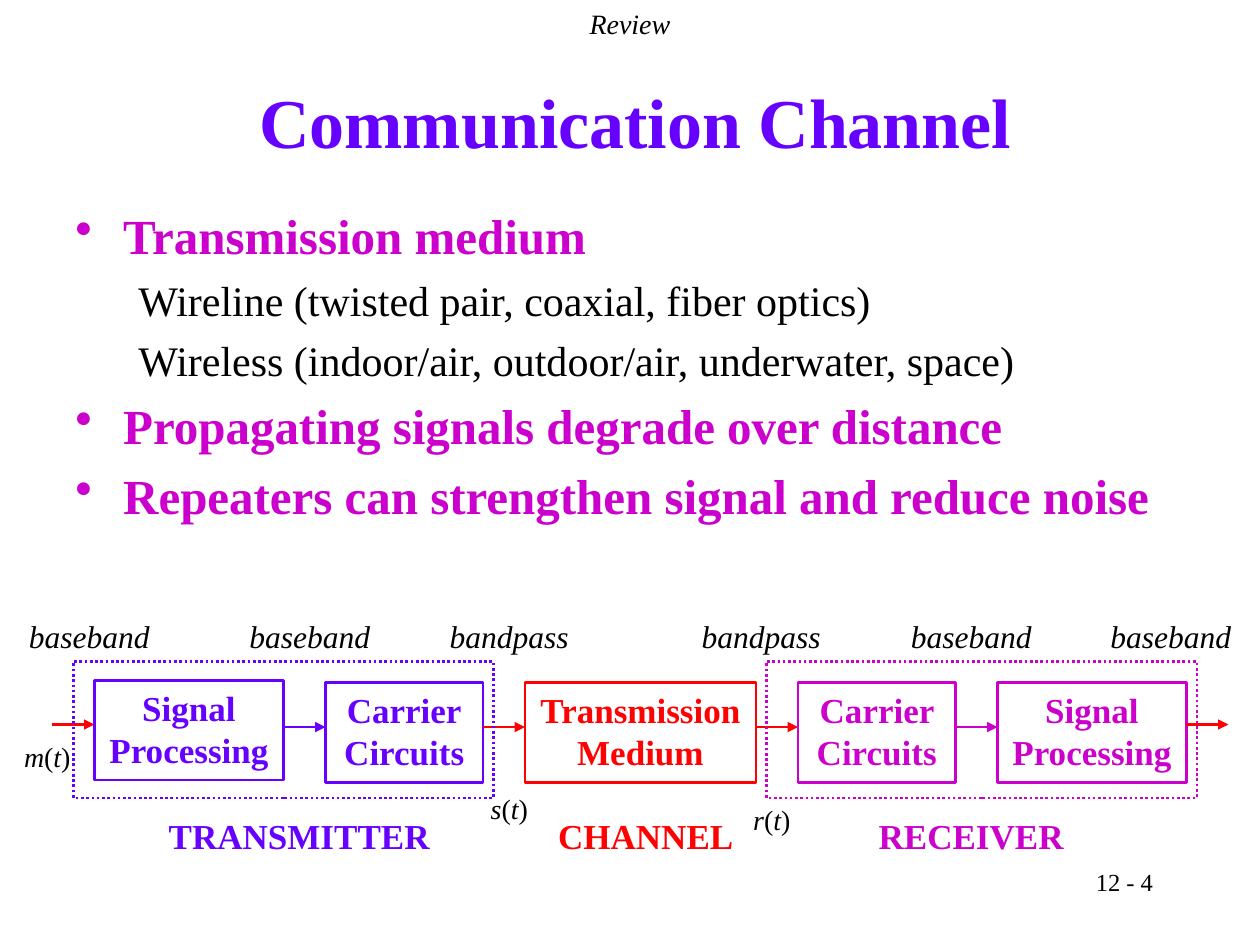
"""Builds the Communication Channel review slide on a grid of 120 by 90 cells."""
import dataclasses
import itertools

import lxml.etree
import pptx
import pptx.dml.color
import pptx.enum.dml
import pptx.enum.shapes
import pptx.enum.text
import pptx.oxml.ns
import pptx.util

ALIGN = pptx.enum.text.PP_ALIGN
ANCHOR = pptx.enum.text.MSO_ANCHOR


@dataclasses.dataclass(frozen=True)
class Theme:
    font: str = "Times New Roman"
    ink: str = "000000"
    violet: str = "6600FF"
    magenta: str = "CC00CC"
    red: str = "FF0101"
    title: int = 40
    point: int = 28
    detail: int = 24
    block: int = 20
    band: int = 18
    small: int = 16
    number: int = 14
    stroke: float = 1.5


THEME = Theme()


def rgb(color):
    return pptx.dml.color.RGBColor.from_string(color)


def sub(parent, tag, **attributes):
    return lxml.etree.SubElement(parent, pptx.oxml.ns.qn(tag), attributes)


def write(paragraph, text, size, color=THEME.ink, bold=False, italic=False,
          italic_letters=False, align=ALIGN.CENTER):
    paragraph.alignment = align
    for number, line in enumerate(text.split("\n")):
        if number:
            paragraph.add_line_break()
        pieces = ([(letters, "".join(group)) for letters, group
                   in itertools.groupby(line, str.isalpha)]
                  if italic_letters else [(italic, line)])
        for slanted, piece in pieces:
            run = paragraph.add_run()
            run.text = piece
            run.font.name, run.font.size = THEME.font, pptx.util.Pt(size)
            run.font.bold, run.font.italic = bold, slanted
            run.font.color.rgb = rgb(color)


class Board:
    def __init__(self, deck):
        self.theme = THEME
        self.cell = deck.slide_width / 120
        self.shapes = deck.slides.add_slide(deck.slide_layouts[6]).shapes

    def place(self, *cells):
        return [round(cell * self.cell) for cell in cells]

    def frame(self, left, top, width, height, anchor=ANCHOR.TOP):
        frame = self.shapes.add_textbox(*self.place(left, top, width, height)).text_frame
        frame.word_wrap = True
        frame.vertical_anchor = anchor
        return frame

    def label(self, left, top, width, height, text, size, anchor=ANCHOR.TOP, **style):
        frame = self.frame(left, top, width, height, anchor)
        write(frame.paragraphs[0], text, size, **style)

    def outline(self, left, top, width, height, color, text="", dotted=False):
        box = self.shapes.add_shape(pptx.enum.shapes.MSO_SHAPE.RECTANGLE,
                                    *self.place(left, top, width, height))
        box.shadow.inherit = False
        box.fill.background()
        box.line.color.rgb = rgb(color)
        box.line.width = pptx.util.Pt(self.theme.stroke)
        if dotted:
            box.line.dash_style = pptx.enum.dml.MSO_LINE.ROUND_DOT
        if text:
            box.text_frame.word_wrap = True
            box.text_frame.vertical_anchor = ANCHOR.TOP
            write(box.text_frame.paragraphs[0], text, self.theme.block, color, bold=True)

    def arrow(self, left, row, length, color):
        arrow = self.shapes.add_connector(pptx.enum.shapes.MSO_CONNECTOR.STRAIGHT,
                                          *self.place(left, row, left + length, row))
        arrow.line.color.rgb = rgb(color)
        arrow.line.width = pptx.util.Pt(self.theme.stroke)
        sub(arrow.line._get_or_add_ln(), "a:tailEnd", type="triangle")
        sub(arrow._element.spPr, "a:effectLst")

    def outlines(self, left, top, width, height, points):
        frame = self.frame(left, top, width, height)
        for number, (level, text) in enumerate(points):
            paragraph = frame.paragraphs[0] if number == 0 else frame.add_paragraph()
            size, color, margin, hang = (
                (self.theme.detail, self.theme.ink, 0.81, 0.31) if level
                else (self.theme.point, self.theme.magenta, 0.38, 0.38))
            write(paragraph, text, size, color, bold=not level, align=ALIGN.LEFT)
            paragraph.level = level
            paragraph.space_before = pptx.util.Pt(round(size * 0.23, 1))
            properties = paragraph._p.get_or_add_pPr()
            properties.set("marL", str(pptx.util.Inches(margin)))
            properties.set("indent", str(-pptx.util.Inches(hang)))
            if level:
                sub(properties, "a:buNone")
            else:
                sub(properties, "a:buChar", char="•")


def main():
    deck = pptx.Presentation()
    deck.slide_width, deck.slide_height = pptx.util.Inches(10), pptx.util.Inches(7.5)
    board = Board(deck)

    board.label(86, 82, 25, 6, "12 - 4", THEME.number, align=ALIGN.RIGHT)
    board.label(6, 4, 109, 15, "Communication Channel", THEME.title,
                anchor=ANCHOR.MIDDLE, color=THEME.violet, bold=True)
    board.outlines(6, 19, 109, 61, [
        (0, "Transmission medium"),
        (1, "Wireline (twisted pair, coaxial, fiber optics)"),
        (1, "Wireless (indoor/air, outdoor/air, underwater, space)"),
        (0, "Propagating signals degrade over distance"),
        (0, "Repeaters can strengthen signal and reduce noise"),
    ])
    board.label(50, 0, 20, 4.4, "Review", THEME.small, italic=True)

    gap, column = 4, 5
    stages = [
        ("Signal\nProcessing", 18, 64.8, THEME.violet, 69, THEME.red),
        ("Carrier\nCircuits", 15, 65, THEME.violet, 69.25, THEME.violet),
        ("Transmission Medium", 22, 65, THEME.red, 69.25, THEME.red),
        ("Carrier Circuits", 15, 65, THEME.magenta, 69.25, THEME.red),
        ("Signal\nProcessing", 18, 65, THEME.magenta, 69.25, THEME.magenta),
    ]
    for text, width, top, color, arrow_row, arrow_color in stages:
        board.arrow(column, arrow_row, gap, arrow_color)
        board.outline(column + gap, top, width, 9.5, color, text)
        column += gap + width
    board.arrow(column, 69, gap, THEME.red)

    for left, width, color in [(7, 40, THEME.violet), (73, 41, THEME.magenta)]:
        board.outline(left, 63, width, 13, color, dotted=True)
    for left, part, color in [(13, "TRANSMITTER", THEME.violet),
                              (46, "CHANNEL", THEME.red),
                              (77, "RECEIVER", THEME.magenta)]:
        board.label(left, 77, 31, 5.2, part, THEME.block, color=color, bold=True)
    for left, top, signal in [(1, 69.8, "m(t)"), (45, 74.8, "s(t)"), (70, 75.8, "r(t)")]:
        board.label(left, top, 7, 4.4, signal, THEME.small, italic_letters=True)
    for left, band in [(1, "baseband"), (22, "baseband"), (41, "bandpass"),
                       (65, "bandpass"), (85, "baseband"), (104, "baseband")]:
        board.label(left, 58.2, 15, 4.8, band, THEME.band, italic=True)

    deck.save("out.pptx")


if __name__ == "__main__":
    main()
